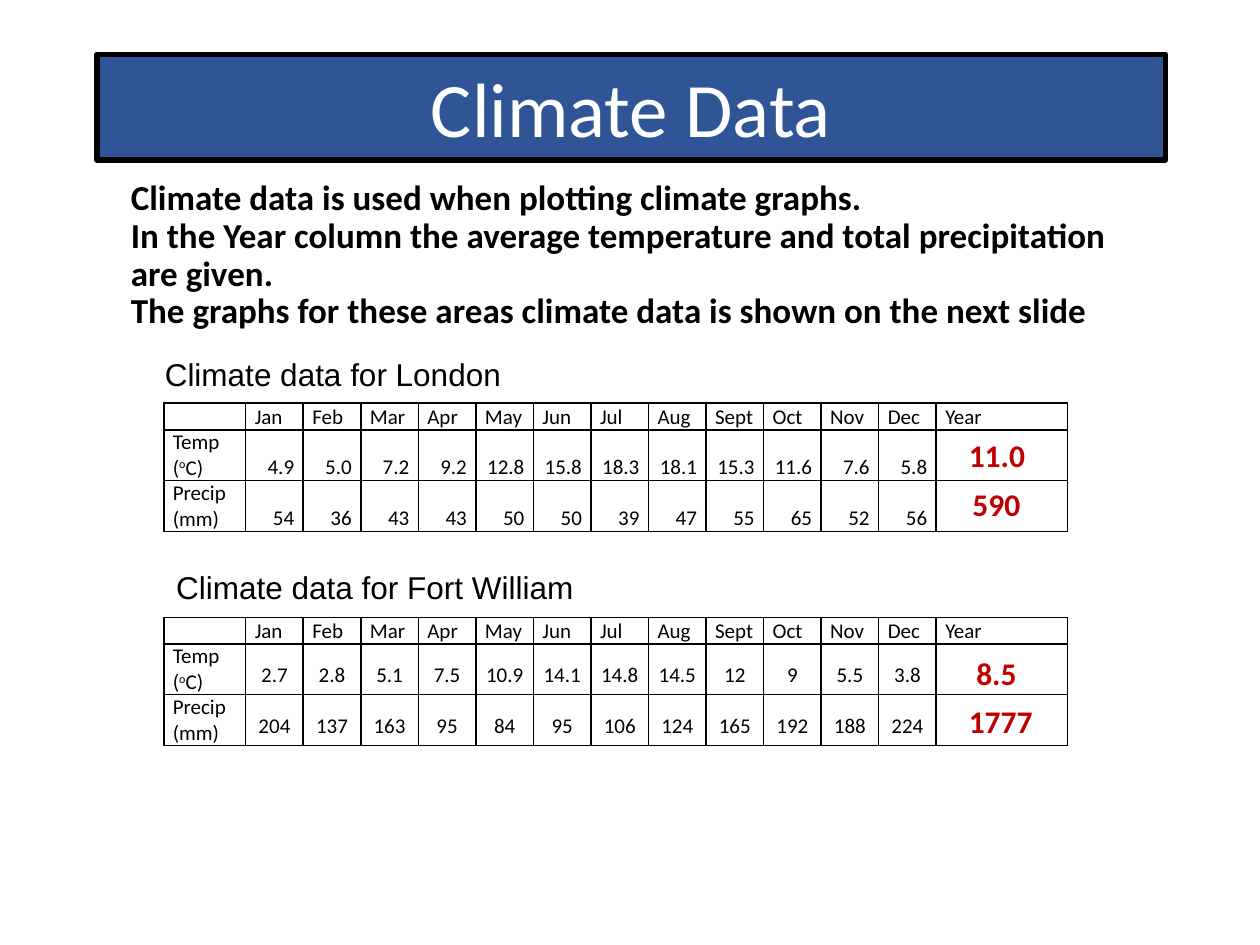
from lxml.etree import SubElement
from pptx import Presentation
from pptx.dml.color import RGBColor
from pptx.enum.text import MSO_ANCHOR as Anchor, MSO_AUTO_SIZE as AutoSize, PP_ALIGN as Align
from pptx.oxml.ns import qn
from pptx.util import Pt

BLACK = RGBColor(0x00, 0x00, 0x00)
WHITE = RGBColor(0xFF, 0xFF, 0xFF)
BLUE = RGBColor(0x2F, 0x55, 0x97)
RED = RGBColor(0xC0, 0x00, 0x00)

# Content
TITLE = "Climate Data"
INTRO = [
    "Climate data is used when plotting climate graphs.",
    "In the Year column the average temperature and total precipitation are given.",
    "The graphs for these areas climate data is shown on the next slide",
]
HEADER = ["", "Jan", "Feb", "Mar", "Apr", "May", "Jun", "Jul", "Aug", "Sept",
          "Oct", "Nov", "Dec", "Year"]
# Row labels as (text, baseline shift) pieces
ROW_LABELS = [[("Temp (", None), ("o", 30), ("C)", None)], [("Precip (mm)", None)]]
STATIONS = [
    {
        "caption": "Climate data for London", "caption_box": (87.1, 199.4, 232.6, 28.8),
        "table_top": 230.4, "align": Align.RIGHT, "anchor": Anchor.BOTTOM, "spacing": None,
        "rows": [
            ["4.9", "5.0", "7.2", "9.2", "12.8", "15.8", "18.3", "18.1", "15.3", "11.6", "7.6", "5.8"],
            ["54", "36", "43", "43", "50", "50", "39", "47", "55", "65", "52", "56"],
        ],
        "year": [("11.0", (546.5, 245.5, 46.8, 28.8)), ("590", (548.6, 273.6, 42.5, 28.8))],
    },
    {
        "caption": "Climate data for Fort William", "caption_box": (93.6, 321.1, 334.8, 28.8),
        "table_top": 352.8, "align": Align.CENTER, "anchor": Anchor.MIDDLE, "spacing": 1.5,
        "rows": [
            ["2.7", "2.8", "5.1", "7.5", "10.9", "14.1", "14.8", "14.5", "12", "9", "5.5", "3.8"],
            ["204", "137", "163", "95", "84", "95", "106", "124", "165", "192", "188", "224"],
        ],
        "year": [("8.5", (550.8, 370.1, 37.4, 28.8)), ("1777", (546.5, 397.4, 51.1, 28.8))],
    },
]

# Table geometry
TABLE_LEFT = 93.6
COLUMN_WIDTHS = [46.8] + [32.9] * 12 + [75]
ROW_HEIGHTS = [15.2, 29, 29]


def set_font(paragraph, size, color, name="Calibri", bold=False):
    font = paragraph.font
    font.name, font.size, font.bold = name, Pt(size), bold
    font.color.rgb = color


def add_text(slide, box, lines, size, color, name="Calibri", bold=False, spacing=None, wrap=True):
    frame = slide.shapes.add_textbox(*map(Pt, box)).text_frame
    frame.word_wrap = wrap
    frame.text = "\n".join(lines)
    for paragraph in frame.paragraphs:
        paragraph.line_spacing = spacing
        set_font(paragraph, size, color, name, bold)


def draw_borders(cell):
    properties = cell._tc.get_or_add_tcPr()
    for position, side in enumerate(("lnL", "lnR", "lnT", "lnB")):
        line = SubElement(properties, qn(f"a:{side}"), w=str(Pt(1)))
        fill = SubElement(line, qn("a:solidFill"))
        SubElement(fill, qn("a:srgbClr"), val=str(BLACK))
        properties.insert(position, line)  # borders come before the fill


def fill_cell(cell, pieces, align=Align.LEFT, anchor=Anchor.BOTTOM, spacing=None):
    cell.fill.background()
    draw_borders(cell)
    cell.margin_left = cell.margin_right = Pt(5.2)
    cell.margin_top = cell.margin_bottom = 0
    cell.vertical_anchor = anchor
    paragraph = cell.text_frame.paragraphs[0]
    paragraph.alignment, paragraph.line_spacing = align, spacing
    set_font(paragraph, 12, BLACK)
    for text, baseline in pieces:
        run = paragraph.add_run()
        run.text = text
        if baseline:
            run.font._element.set("baseline", str(baseline * 1000))
    if not pieces:  # keeps an empty cell from growing its row
        SubElement(paragraph._p, qn("a:endParaRPr"), sz="1200")


def add_station(slide, station):
    add_text(slide, station["caption_box"], [station["caption"]], 18, BLACK, name="Arial")
    frame = slide.shapes.add_table(
        len(ROW_HEIGHTS), len(COLUMN_WIDTHS), Pt(TABLE_LEFT), Pt(station["table_top"]),
        Pt(sum(COLUMN_WIDTHS)), Pt(sum(ROW_HEIGHTS)))
    table = frame.table
    table.first_row = table.horz_banding = False
    for column, width in zip(table.columns, COLUMN_WIDTHS):
        column.width = Pt(width)
    for row, height in zip(table.rows, ROW_HEIGHTS):
        row.height = Pt(height)

    for column, name in enumerate(HEADER):
        fill_cell(table.cell(0, column), [(name, None)] if name else [])
    for row, (label, values) in enumerate(zip(ROW_LABELS, station["rows"]), start=1):
        fill_cell(table.cell(row, 0), label)
        for column, value in enumerate(values, start=1):
            fill_cell(table.cell(row, column), [(value, None)],
                      station["align"], station["anchor"], station["spacing"])
        fill_cell(table.cell(row, len(HEADER) - 1), [])

    # Yearly figures lie over the last column
    for value, box in station["year"]:
        add_text(slide, box, [value], 18, RED, bold=True, wrap=False)


def main():
    deck = Presentation()
    deck.slide_width, deck.slide_height = Pt(720), Pt(540)
    slide = deck.slides.add_slide(deck.slide_layouts[5])

    # Title banner
    title = slide.shapes.title
    title.left, title.top, title.width, title.height = map(Pt, (55.4, 31, 610.6, 60.5))
    title.fill.solid()
    title.fill.fore_color.rgb = BLUE
    title.line.color.rgb = BLACK
    title.line.width = Pt(3)
    banner = title.text_frame
    banner.text = TITLE
    banner.auto_size = AutoSize.NONE
    banner.vertical_anchor = Anchor.TOP
    banner.paragraphs[0].alignment = Align.CENTER
    set_font(banner.paragraphs[0], 44, WHITE)

    # Introduction and the two stations
    add_text(slide, (67.7, 99.4, 591.8, 94.3), INTRO, 20, BLACK, bold=True, spacing=0.9)
    for station in STATIONS:
        add_station(slide, station)

    deck.save("out.pptx")


if __name__ == "__main__":
    main()
